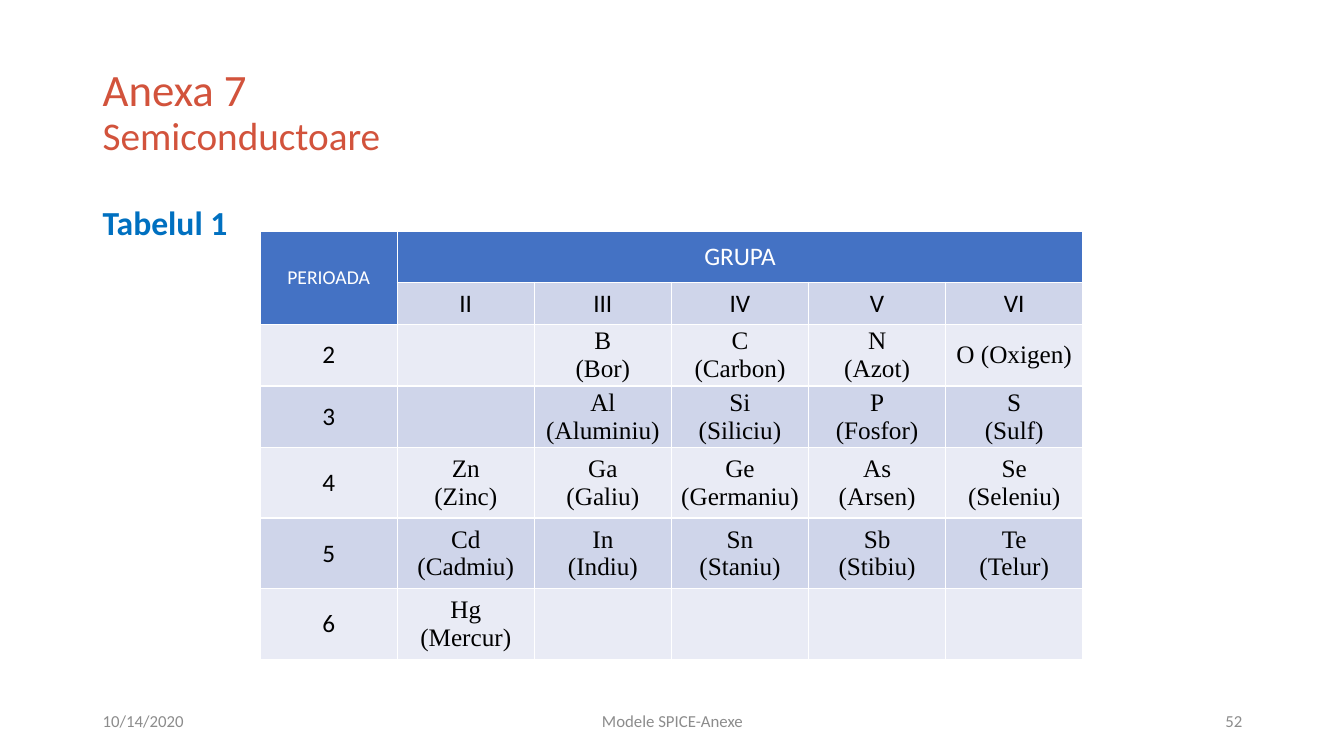
from dataclasses import dataclass

from lxml.etree import SubElement
from pptx import Presentation
from pptx.dml.color import RGBColor
from pptx.enum.text import MSO_ANCHOR as Anchor, PP_ALIGN as Align
from pptx.oxml.ns import qn
from pptx.util import Inches, Pt


@dataclass(frozen=True)
class Theme:
    sans: str = "Calibri"
    serif: str = "Times New Roman"
    title: str = "D2533C"
    caption: str = "0070C0"
    footer: str = "8C8C8C"
    header: str = "4472C4"
    bands: tuple = ("CFD5EA", "E9EBF5")
    white: str = "FFFFFF"
    black: str = "000000"
    title_size: int = 32
    subtitle_size: int = 28
    caption_size: int = 24
    cell_size: int = 18
    period_size: int = 14
    footer_size: int = 12


THEME = Theme()
GROUPS = ["II", "III", "IV", "V", "VI"]
ELEMENTS = {
    "2": ["", "B\n(Bor)", "C\n(Carbon)", "N\n(Azot)", "O (Oxigen)"],
    "3": ["", "Al (Aluminiu)", "Si\n(Siliciu)", "P\n(Fosfor)", "S\n(Sulf)"],
    "4": ["Zn\n(Zinc)", "Ga\n(Galiu)", "Ge (Germaniu)", "As\n(Arsen)", "Se (Seleniu)"],
    "5": ["Cd (Cadmiu)", "In\n(Indiu)", "Sn\n(Staniu)", "Sb\n(Stibiu)", "Te\n(Telur)"],
    "6": ["Hg (Mercur)", "", "", "", ""],
}
ROW_HEIGHTS = [0.5, 0.42, 0.61, 0.61, 0.7, 0.7, 0.7]
COLUMN_WIDTH = 1.36


def style_font(font, size, color, face=THEME.sans, bold=False):
    font.name, font.size, font.bold = face, Pt(size), bold
    font.color.rgb = RGBColor.from_string(color)


def add_text(slide, box, text, size, color, align=Align.LEFT,
             anchor=Anchor.MIDDLE, bold=False, spacing=1.0):
    frame = slide.shapes.add_textbox(*map(Inches, box)).text_frame
    frame.word_wrap = True
    frame.vertical_anchor = anchor
    paragraph = frame.paragraphs[0]
    paragraph.text = text
    paragraph.alignment = align
    paragraph.line_spacing = spacing
    style_font(paragraph.font, size, color, bold=bold)
    return paragraph


def add_title(slide):
    title = add_text(slide, (0.92, 0.4, 11.5, 1.45), "Anexa 7\v",
                     THEME.title_size, THEME.title, spacing=0.9)
    subtitle = title.add_run()
    subtitle.text = "Semiconductoare"
    subtitle.font.size = Pt(THEME.subtitle_size)


def add_borders(cell):
    properties = cell._tc.get_or_add_tcPr()
    for position, side in enumerate(("lnL", "lnR", "lnT", "lnB")):
        line = properties.makeelement(qn(f"a:{side}"), {"w": str(Pt(1))})
        fill = SubElement(line, qn("a:solidFill"))
        SubElement(fill, qn("a:srgbClr"), val=THEME.white)
        properties.insert(position, line)


def fill_cell(cell, text, fill, color=THEME.black, size=THEME.cell_size,
              face=THEME.sans, tight=False):
    cell.fill.solid()
    cell.fill.fore_color.rgb = RGBColor.from_string(fill)
    cell.vertical_anchor = Anchor.MIDDLE
    cell.margin_left = cell.margin_right = Inches(0.07 if tight else 0.1)
    cell.margin_top = cell.margin_bottom = Inches(0 if tight else 0.05)
    cell.text_frame.text = text
    for paragraph in cell.text_frame.paragraphs:
        paragraph.alignment = Align.CENTER
        style_font(paragraph.font, size, color, face)
    add_borders(cell)


def add_element_table(slide):
    rows, columns = len(ROW_HEIGHTS), len(GROUPS) + 1
    table = slide.shapes.add_table(
        rows, columns, Inches(2.58), Inches(2.3),
        Inches(COLUMN_WIDTH * columns), Inches(sum(ROW_HEIGHTS))).table
    for column in table.columns:
        column.width = Inches(COLUMN_WIDTH)
    for row, height in zip(table.rows, ROW_HEIGHTS):
        row.height = Inches(height)

    table.cell(0, 0).merge(table.cell(1, 0))
    table.cell(0, 1).merge(table.cell(0, columns - 1))
    for c in range(columns):
        fill_cell(table.cell(0, c), "GRUPA" if c == 1 else "", THEME.header, THEME.white)
    for r in range(2):
        fill_cell(table.cell(r, 0), "" if r else "PERIOADA", THEME.header,
                  THEME.white, THEME.period_size)
    for c, group in enumerate(GROUPS, 1):
        fill_cell(table.cell(1, c), group, THEME.bands[0])

    for r, (period, elements) in enumerate(ELEMENTS.items(), 2):
        band = THEME.bands[(r - 1) % 2]
        fill_cell(table.cell(r, 0), period, band)
        for c, element in enumerate(elements, 1):
            fill_cell(table.cell(r, c), element, band, face=THEME.serif, tight=c > 1)


def add_footer(slide):
    for left, width, text, align in (
        (0.92, 3, "10/14/2020", Align.LEFT),
        (4.42, 4.5, "Modele SPICE-Anexe", Align.CENTER),
        (9.42, 3, "52", Align.RIGHT),
    ):
        add_text(slide, (left, 6.95, width, 0.4), text,
                 THEME.footer_size, THEME.footer, align)


def main():
    deck = Presentation()
    deck.slide_width, deck.slide_height = Inches(13.33), Inches(7.5)
    slide = deck.slides.add_slide(deck.slide_layouts[6])
    add_title(slide)
    add_text(slide, (0.92, 2, 11.5, 4.76), "Tabelul 1", THEME.caption_size,
             THEME.caption, anchor=Anchor.TOP, bold=True, spacing=0.9)
    add_element_table(slide)
    add_footer(slide)
    deck.save("out.pptx")


if __name__ == "__main__":
    main()
